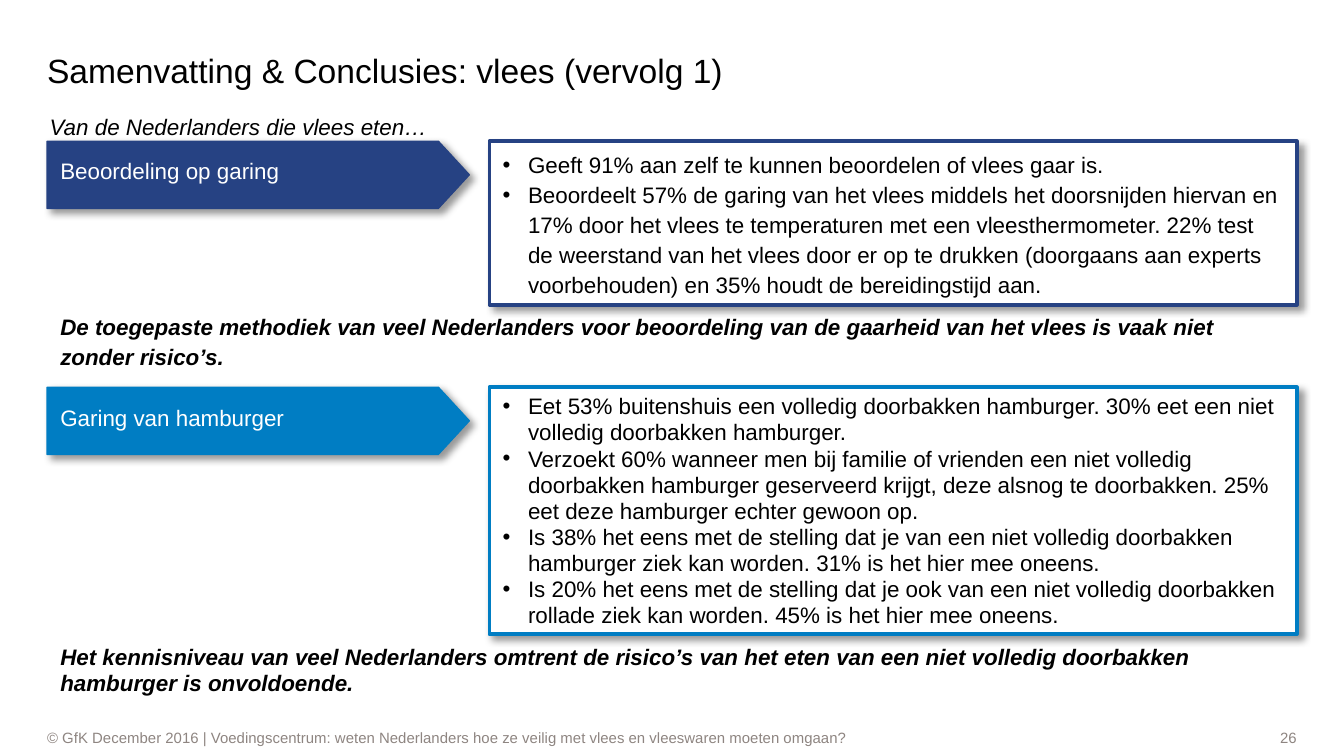
"""Build the summary slide on judging and cooking meat."""
from lxml.etree import SubElement
from pptx import Presentation
from pptx.dml.color import RGBColor
from pptx.enum.shapes import MSO_SHAPE
from pptx.enum.text import MSO_ANCHOR, MSO_AUTO_SIZE, PP_ALIGN
from pptx.oxml.ns import qn
from pptx.util import Cm, Pt

NAVY = RGBColor(0x26, 0x42, 0x83)
BLUE = RGBColor(0x00, 0x7D, 0xC3)
GREY = RGBColor(0x8E, 0x85, 0x81)
BLACK = RGBColor(0, 0, 0)
WHITE = RGBColor(255, 255, 255)

TITLE = "Samenvatting & Conclusies: vlees (vervolg 1)"
INTRO = "Van de Nederlanders die vlees eten…"
FOOTER = ("© GfK December 2016 | Voedingscentrum: weten Nederlanders hoe ze veilig "
          "met vlees en vleeswaren moeten omgaan?")
PAGE = "26"
SECTIONS = [
    {"label": "Beoordeling op garing", "color": NAVY, "top": 2.67, "height": 3.09,
     "spacing": 16, "label_spacing": None, "end_top": 5.74, "end_height": 1.4,
     "points": [
         "Geeft 91% aan zelf te kunnen beoordelen of vlees gaar is.",
         "Beoordeelt 57% de garing van het vlees middels het doorsnijden hiervan en "
         "17% door het vlees te temperaturen met een vleesthermometer. 22% test de "
         "weerstand van het vlees door er op te drukken (doorgaans aan experts "
         "voorbehouden) en 35% houdt de bereidingstijd aan."],
     "conclusion": "De toegepaste methodiek van veel Nederlanders voor beoordeling van "
                   "de gaarheid van het vlees is vaak niet zonder risico’s."},
    {"label": "Garing van hamburger", "color": BLUE, "top": 7.32, "height": 4.67,
     "spacing": 14, "label_spacing": 16, "end_top": 12.04, "end_height": 1.24,
     "points": [
         "Eet 53% buitenshuis een volledig doorbakken hamburger. 30% eet een niet "
         "volledig doorbakken hamburger.",
         "Verzoekt 60% wanneer men bij familie of vrienden een niet volledig doorbakken "
         "hamburger geserveerd krijgt, deze alsnog te doorbakken. 25% eet deze "
         "hamburger echter gewoon op.",
         "Is 38% het eens met de stelling dat je van een niet volledig doorbakken "
         "hamburger ziek kan worden. 31% is het hier mee oneens.",
         "Is 20% het eens met de stelling dat je ook van een niet volledig doorbakken "
         "rollade ziek kan worden. 45% is het hier mee oneens."],
     "conclusion": "Het kennisniveau van veel Nederlanders omtrent de risico’s van het "
                   "eten van een niet volledig doorbakken hamburger is onvoldoende."},
]

LEFT, RIGHT = 0.89, 24.51
ARROW_W, ARROW_H = 7.98, 1.27
BOX_LEFT = 9.25
FOOTER_TOP, FOOTER_H = 13.74, 0.41
INSET = (0.25, 0.13, 0.25, 0.13)
NO_INSET = (0, 0, 0, 0)


def write(sp, texts, size=12, color=BLACK, inset=INSET, anchor=MSO_ANCHOR.MIDDLE,
          align=PP_ALIGN.LEFT, spacing=None, bullets=False, **style):
    tf = sp.text_frame
    left, top, right, bottom = (Cm(v) for v in inset)
    frame = {"word_wrap": True, "auto_size": MSO_AUTO_SIZE.NONE,
             "vertical_anchor": anchor, "margin_left": left, "margin_top": top,
             "margin_right": right, "margin_bottom": bottom}
    for name, value in frame.items():
        setattr(tf, name, value)
    for i, text in enumerate(texts):
        p = tf.add_paragraph() if i else tf.paragraphs[0]
        p.alignment = align
        if spacing:
            p.line_spacing = Pt(spacing)
        if bullets:
            pPr = p._p.get_or_add_pPr()
            pPr.set("marL", str(Cm(0.48)))
            pPr.set("indent", str(-Cm(0.48)))
            SubElement(pPr, qn("a:buFont"), typeface="Arial")
            SubElement(pPr, qn("a:buChar"), char="•")
        r = p.add_run()
        r.text = text
        for name, value in {"name": "Arial", "size": Pt(size), **style}.items():
            setattr(r.font, name, value)
        r.font.color.rgb = color


def add_text(s, box, text, **options):
    sp = s.shapes.add_textbox(*(Cm(v) for v in box))
    write(sp, [text], **options)


def add_panel(s, kind, box, fill, line, width):
    sp = s.shapes.add_shape(kind, *(Cm(v) for v in box))
    sp.fill.solid()
    sp.fill.fore_color.rgb = fill
    sp.line.color.rgb = line
    sp.line.width = Pt(width)
    sp.shadow.inherit = False
    effects = sp._element.spPr.find(qn("a:effectLst"))
    shadow = SubElement(effects, qn("a:outerShdw"), blurRad=str(Pt(4)), dist=str(Pt(3)),
                        dir="2700000", algn="tl", rotWithShape="0")
    color = SubElement(shadow, qn("a:srgbClr"), val=str(BLACK))
    SubElement(color, qn("a:alpha"), val="40000")
    return sp


def add_section(s, sec):
    color, top = sec["color"], sec["top"]
    box = add_panel(s, MSO_SHAPE.RECTANGLE,
                    (BOX_LEFT, top, RIGHT - BOX_LEFT, sec["height"]), WHITE, color, 2)
    write(box, sec["points"], spacing=sec["spacing"], bullets=True)
    arrow = add_panel(s, MSO_SHAPE.PENTAGON, (LEFT, top, ARROW_W, ARROW_H),
                      color, color, 0.75)
    arrow.adjustments[0] = 0.46
    write(arrow, [sec["label"]], color=WHITE, inset=(0.25, 0.13, 0.25, 0.3),
          spacing=sec["label_spacing"])
    add_text(s, (LEFT, sec["end_top"], RIGHT - LEFT, sec["end_height"]),
             sec["conclusion"], anchor=MSO_ANCHOR.TOP, spacing=sec["spacing"],
             bold=True, italic=True)


def main():
    prs = Presentation()
    prs.slide_width, prs.slide_height = Cm(25.4), Cm(14.29)
    s = prs.slides.add_slide(prs.slide_layouts[5])
    title = s.shapes.title
    title.left, title.top, title.width, title.height = Cm(LEFT), Cm(0.53), Cm(17.81), Cm(1.6)
    write(title, [TITLE], size=18, inset=NO_INSET)
    add_text(s, (0.94, 2.13, 9.4, 0.51), INTRO, inset=NO_INSET,
             anchor=MSO_ANCHOR.TOP, italic=True)
    for sec in SECTIONS:
        add_section(s, sec)
    small = {"size": 8, "color": GREY, "inset": NO_INSET}
    add_text(s, (LEFT, FOOTER_TOP, 19.61, FOOTER_H), FOOTER, **small)
    add_text(s, (RIGHT - 3.61, FOOTER_TOP, 3.61, FOOTER_H), PAGE,
             align=PP_ALIGN.RIGHT, **small)
    prs.save("out.pptx")


if __name__ == "__main__":
    main()
